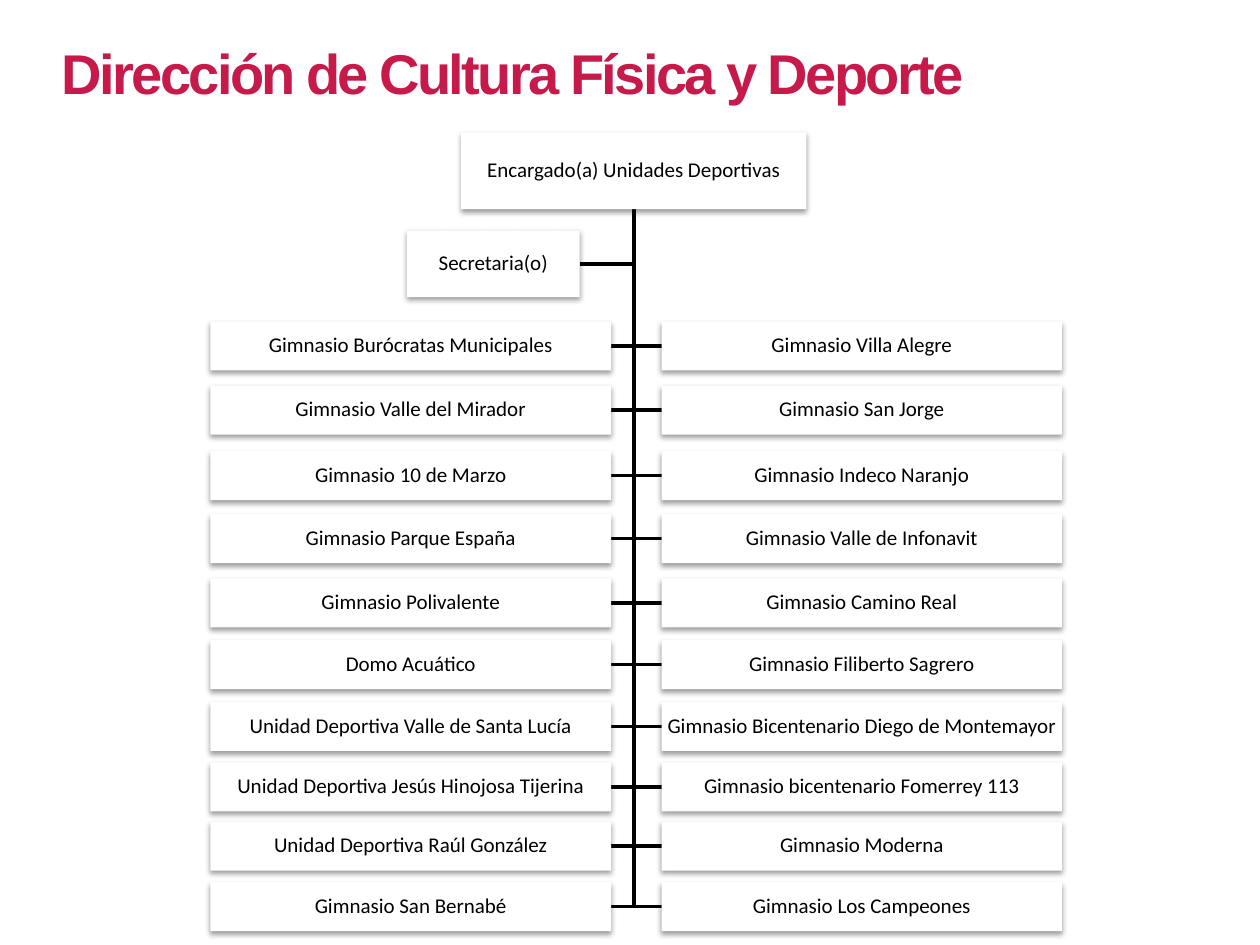
"""Organisation chart of the sports units, drawn on a grid of 100 columns by 75 rows."""
from lxml import etree
from pptx import Presentation
from pptx import util as u
from pptx.dml.color import RGBColor
from pptx.enum import shapes, text
from pptx.oxml import parse_xml
from pptx.oxml.ns import nsdecls, qn

COLORS = {"title": "C51A4A", "ink": "000000", "box": "FFFFFF"}
SHADOW = (
    f'<a:outerShdw {nsdecls("a")} blurRad="40000" dist="20000" dir="5400000" rotWithShape="0">'
    f'<a:srgbClr val="{COLORS["ink"]}"><a:alpha val="38000"/></a:srgbClr></a:outerShdw>'
)
TRUNK_COLUMN = 50.3
LEFT_COLUMN, RIGHT_COLUMN = 16.7, 52.5
UNIT_WIDTH, UNIT_HEIGHT = 31.8, 3.9
HEAD = (36.6, 10.5, 27.4, 6.1)
SECRETARY = (32.3, 18.3, 13.7, 5.3)
UNITS = [
    (25.5, "Gimnasio Burócratas Municipales", "Gimnasio Villa Alegre"),
    (30.6, "Gimnasio Valle del Mirador", "Gimnasio San Jorge"),
    (35.8, "Gimnasio 10 de Marzo", "Gimnasio Indeco Naranjo"),
    (40.8, "Gimnasio Parque España", "Gimnasio Valle de Infonavit"),
    (45.9, "Gimnasio Polivalente", "Gimnasio Camino Real"),
    (50.8, "Domo Acuático", "Gimnasio Filiberto Sagrero"),
    (55.7, "Unidad Deportiva Valle de Santa Lucía", "Gimnasio Bicentenario Diego de Montemayor"),
    (60.5, "Unidad Deportiva Jesús Hinojosa Tijerina", "Gimnasio bicentenario Fomerrey 113"),
    (65.2, "Unidad Deportiva Raúl González", "Gimnasio Moderna"),
    (70, "Gimnasio San Bernabé", "Gimnasio Los Campeones"),
]


class ChartSlide:
    """Holds the style and the current slide."""

    def __init__(self, presentation):
        self.slide = presentation.slides.add_slide(presentation.slide_layouts[6])
        self.column = presentation.slide_width / 100
        self.row = presentation.slide_height / 75

    def point(self, column, row):
        return round(column * self.column), round(row * self.row)

    def style(self, font, name, size, color):
        font.name, font.size = name, u.Pt(size)
        font.color.rgb = RGBColor.from_string(COLORS[color])

    def title(self, words, left, top, width, height):
        shape = self.slide.shapes.add_textbox(*self.point(left, top), *self.point(width, height))
        frame = shape.text_frame
        frame.word_wrap = True
        frame.auto_size = text.MSO_AUTO_SIZE.SHAPE_TO_FIT_TEXT
        paragraph = frame.paragraphs[0]
        run = paragraph.add_run()
        run.text = words
        run._r.get_or_add_rPr().set("spc", "-150")
        self.style(paragraph.font, "Arial", 32, "title")
        paragraph.font.bold = True

    def elbow(self, start_row, end_column, end_row):
        corner = self.point(TRUNK_COLUMN, end_row)
        builder = self.slide.shapes.build_freeform(*self.point(TRUNK_COLUMN, start_row))
        builder.add_line_segments([corner, self.point(end_column, end_row)], close=False)
        shape = builder.convert_to_shape()
        shape.shadow.inherit = False
        shape.fill.background()
        shape.line.width = u.Pt(2)
        shape.line.color.rgb = RGBColor.from_string(COLORS["ink"])

    def box(self, words, left, top, width, height):
        shape = self.slide.shapes.add_shape(
            shapes.MSO_SHAPE.RECTANGLE, *self.point(left, top), *self.point(width, height))
        shape.fill.solid()
        shape.fill.fore_color.rgb = RGBColor.from_string(COLORS["box"])
        shape.line.fill.background()
        shape.shadow.inherit = False
        shape._element.spPr.find(qn("a:effectLst")).append(parse_xml(SHADOW))
        frame = shape.text_frame
        frame.word_wrap = True
        frame.vertical_anchor = text.MSO_ANCHOR.MIDDLE
        frame.margin_left = frame.margin_right = u.Inches(0.01)
        frame.margin_top = frame.margin_bottom = u.Inches(0.01)
        paragraph = frame.paragraphs[0]
        paragraph.text = words
        paragraph.alignment = text.PP_ALIGN.CENTER
        paragraph.line_spacing = 0.9
        self.style(paragraph.font, "Calibri", 12, "ink")


def main():
    presentation = Presentation()
    presentation.slide_width, presentation.slide_height = u.Inches(10), u.Inches(7.5)
    chart = ChartSlide(presentation)
    chart.title("Dirección de Cultura Física y Deporte", 3.9, 2.6, 76.9, 6.4)

    head_bottom = HEAD[1] + HEAD[3]
    chart.elbow(head_bottom, SECRETARY[0] + SECRETARY[2], SECRETARY[1] + SECRETARY[3] / 2)
    for top, _, _ in UNITS:
        for edge in (LEFT_COLUMN + UNIT_WIDTH, RIGHT_COLUMN):
            chart.elbow(head_bottom, edge, top + UNIT_HEIGHT / 2)

    chart.box("Encargado(a) Unidades Deportivas", *HEAD)
    for top, *names in UNITS:
        for left, name in zip((LEFT_COLUMN, RIGHT_COLUMN), names):
            chart.box(name, left, top, UNIT_WIDTH, UNIT_HEIGHT)
    chart.box("Secretaria(o)", *SECRETARY)
    presentation.save("out.pptx")


if __name__ == "__main__":
    main()
